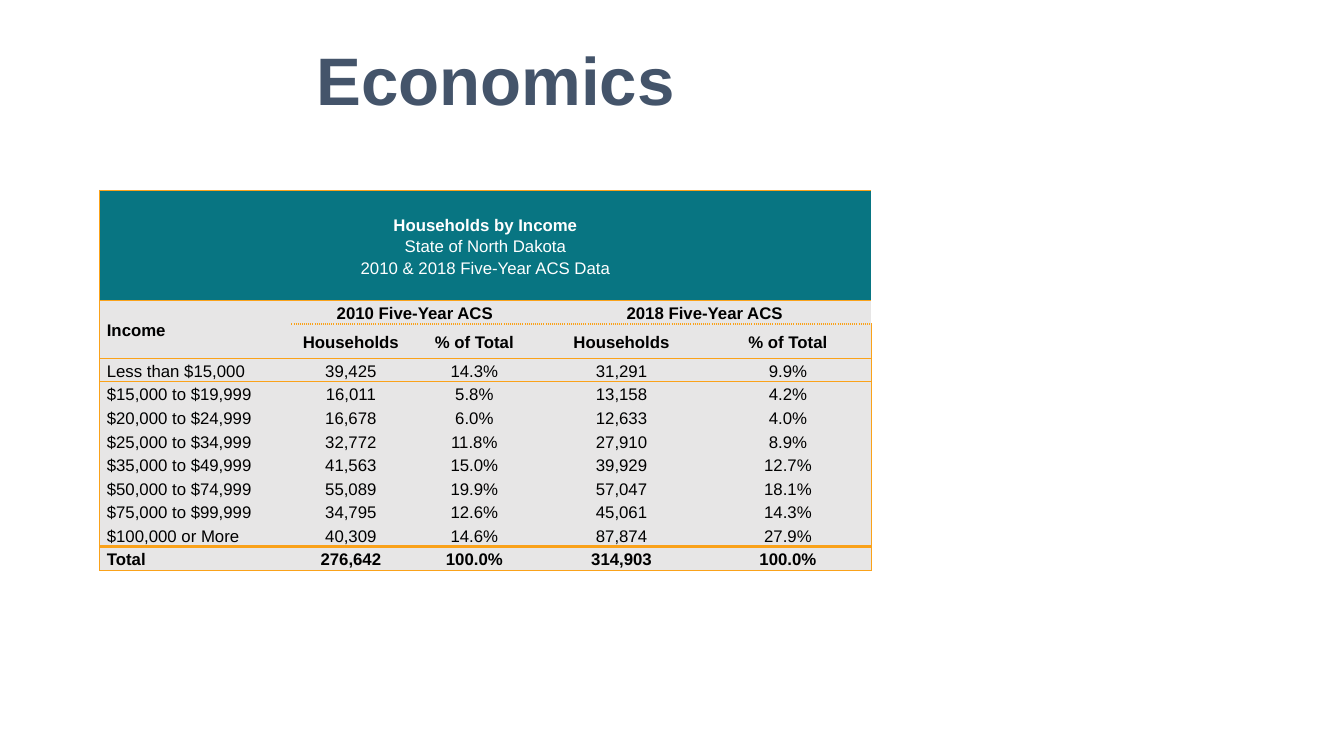
import pptx
import pptx.util
import pptx.dml.color
import pptx.enum.text
import lxml.etree
from pptx.util import Inches

HEADING = "Economics"
CAPTION = ["Households by Income", "State of North Dakota", "2010 & 2018 Five-Year ACS Data"]
GRID = [
    ("\n".join(CAPTION), "", "", "", ""),
    ("Income", "2010 Five-Year ACS", "", "2018 Five-Year ACS", ""),
    ("", "Households", "% of Total", "Households", "% of Total"),
    ("Less than $15,000", "39,425", "14.3%", "31,291", "9.9%"),
    ("$15,000 to $19,999", "16,011", "5.8%", "13,158", "4.2%"),
    ("$20,000 to $24,999", "16,678", "6.0%", "12,633", "4.0%"),
    ("$25,000 to $34,999", "32,772", "11.8%", "27,910", "8.9%"),
    ("$35,000 to $49,999", "41,563", "15.0%", "39,929", "12.7%"),
    ("$50,000 to $74,999", "55,089", "19.9%", "57,047", "18.1%"),
    ("$75,000 to $99,999", "34,795", "12.6%", "45,061", "14.3%"),
    ("$100,000 or More", "40,309", "14.6%", "87,874", "27.9%"),
    ("Total", "276,642", "100.0%", "314,903", "100.0%"),
]
MERGES = [((0, 0), (0, 4)), ((1, 0), (2, 0)), ((1, 1), (1, 2)), ((1, 3), (1, 4))]
COLUMN_WIDTHS = [1.9, 1.18, 1.27, 1.65, 1.65]
TABLE_HEIGHT, CAPTION_HEIGHT, LABEL_HEIGHT = 3.77, 1.09, 0.34
TOTAL_ROW = len(GRID) - 1
LAST_COLUMN = len(COLUMN_WIDTHS) - 1
RULES = {0: (1, "solid"), 1: (1, "solid"), 2: (1, "dot"), 3: (1, "solid"),
         TOTAL_ROW: (2.25, "solid"), len(GRID): (1, "solid")}
PLAIN_STYLE = "{2D5ABB26-0587-4C30-8999-92F81FD0307C}"

SLATE = pptx.dml.color.RGBColor(0x44, 0x54, 0x6A)
TEAL = pptx.dml.color.RGBColor(0x08, 0x75, 0x82)
GREY = pptx.dml.color.RGBColor(0xE7, 0xE6, 0xE6)
ORANGE = pptx.dml.color.RGBColor(0xFA, 0xA2, 0x1A)
WHITE = pptx.dml.color.RGBColor(0xFF, 0xFF, 0xFF)
BLACK = pptx.dml.color.RGBColor(0, 0, 0)
CENTER = pptx.enum.text.PP_ALIGN.CENTER
LEFT = pptx.enum.text.PP_ALIGN.LEFT
MIDDLE = pptx.enum.text.MSO_ANCHOR.MIDDLE


def style_paragraph(paragraph, size, color, bold, align):
    paragraph.alignment = align
    for run in paragraph.runs:
        run.font.name = "Arial"
        run.font.size = pptx.util.Pt(size)
        run.font.bold = bold
        run.font.color.rgb = color


def add_border(cell, side, width, dash):
    ns = pptx.oxml.ns.qn
    line = lxml.etree.SubElement(cell._tc.get_or_add_tcPr(), ns("a:ln" + side),
                                 w=str(pptx.util.Pt(width)))
    paint = lxml.etree.SubElement(line, ns("a:solidFill"))
    lxml.etree.SubElement(paint, ns("a:srgbClr"), val=str(ORANGE))
    lxml.etree.SubElement(line, ns("a:prstDash"), val=dash)


def border_cell(cell, row, column):
    if column == 0:
        add_border(cell, "L", 1, "solid")
    if column == LAST_COLUMN:
        add_border(cell, "R", 1, "solid")
    for side, edge in (("T", row), ("B", row + 1)):
        inside_income = column == 0 and edge == 2
        if edge in RULES and not inside_income:
            add_border(cell, side, *RULES[edge])


def fill_cell(cell, row, column, content):
    cell.margin_left = cell.margin_right = Inches(0.07)
    cell.margin_top = cell.margin_bottom = 0
    cell.vertical_anchor = MIDDLE
    border_cell(cell, row, column)
    cell.fill.solid()
    cell.fill.fore_color.rgb = TEAL if row == 0 else GREY
    if not content:
        return
    cell.text_frame.text = content
    for index, paragraph in enumerate(cell.text_frame.paragraphs):
        bold = index == 0 and (row < 3 or row == TOTAL_ROW)
        align = LEFT if column == 0 and row > 0 else CENTER
        style_paragraph(paragraph, 12, WHITE if row == 0 else BLACK, bold, align)
        paragraph.line_spacing = 1.15


def add_income_table(slide):
    frame = slide.shapes.add_table(len(GRID), len(COLUMN_WIDTHS), Inches(0.99), Inches(1.89),
                                   Inches(sum(COLUMN_WIDTHS)), Inches(TABLE_HEIGHT))
    income = frame.table
    income.first_row = income.horz_banding = False
    income._tbl.tblPr.find(pptx.oxml.ns.qn("a:tableStyleId")).text = PLAIN_STYLE
    for column, width in zip(income.columns, COLUMN_WIDTHS):
        column.width = Inches(width)
    special_heights = {0: CAPTION_HEIGHT, 2: LABEL_HEIGHT}
    line_height = (TABLE_HEIGHT - sum(special_heights.values())) / (len(GRID) - 2)
    for row, values in enumerate(GRID):
        income.rows[row].height = Inches(special_heights.get(row, line_height))
        for column, content in enumerate(values):
            fill_cell(income.cell(row, column), row, column, content)
    for first, last in MERGES:
        income.cell(*first).merge(income.cell(*last))


def main():
    deck = pptx.Presentation()
    deck.slide_width, deck.slide_height = Inches(13.33), Inches(7.5)
    slide = deck.slides.add_slide(deck.slide_layouts[5])
    heading = slide.shapes.title
    heading.left, heading.top = Inches(0.28), Inches(0.33)
    heading.width, heading.height = Inches(9.27), Inches(0.9)
    heading.text_frame.text = HEADING
    heading.text_frame.vertical_anchor = MIDDLE
    style_paragraph(heading.text_frame.paragraphs[0], 48, SLATE, True, CENTER)
    add_income_table(slide)
    deck.save("out.pptx")


if __name__ == "__main__":
    main()
